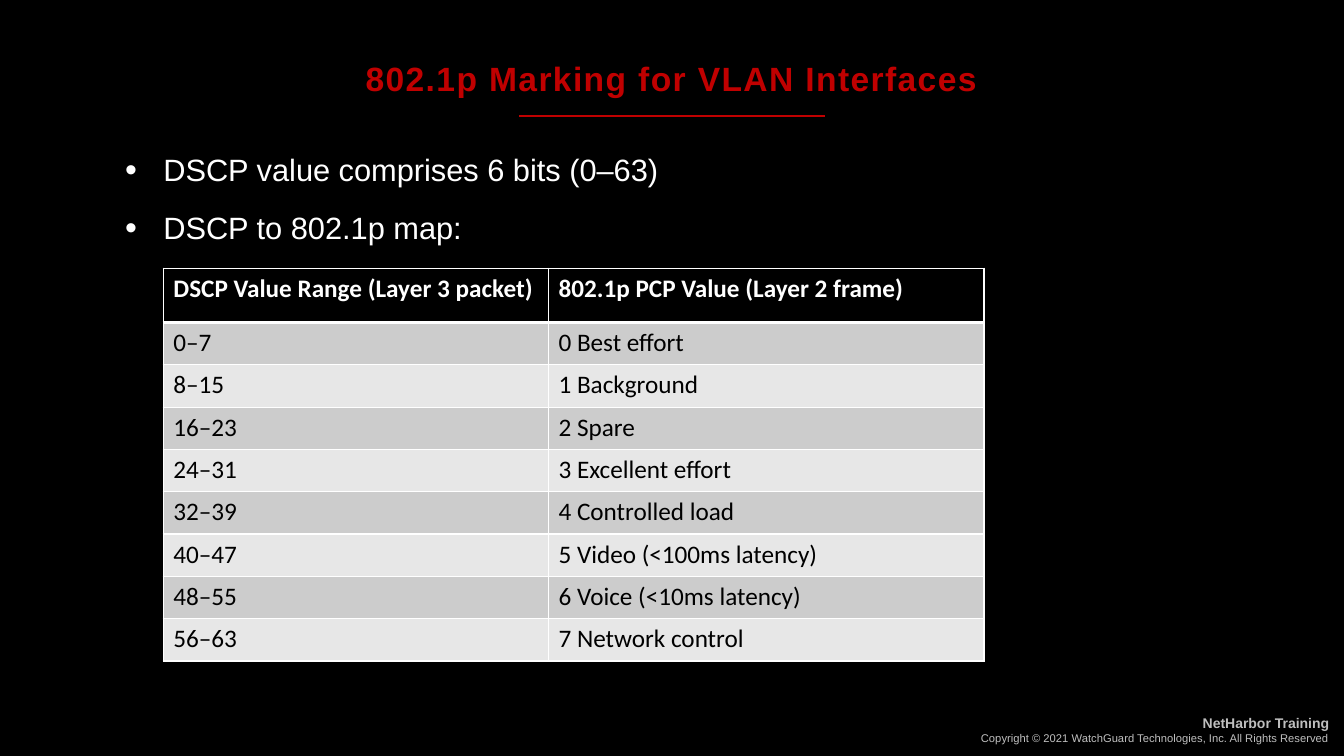
from lxml import etree
from pptx import Presentation
from pptx import util as u
from pptx.dml.color import RGBColor
from pptx.enum import shapes, text
from pptx.oxml import parse_xml
from pptx.oxml.ns import nsdecls, qn

COLORS = {
    "black": "000000",
    "white": "FFFFFF",
    "red": "C00000",
    "gray": "BFBFBF",
    "band_dark": "CCCCCC",
    "band_light": "E7E7E7",
}
BULLETS = ["DSCP value comprises 6 bits (0–63)", "DSCP to 802.1p map:"]
HEADINGS = ["DSCP Value Range (Layer 3 packet)", "802.1p PCP Value (Layer 2 frame)"]
PRIORITIES = [
    "Best effort",
    "Background",
    "Spare",
    "Excellent effort",
    "Controlled load",
    "Video (<100ms latency)",
    "Voice (<10ms latency)",
    "Network control",
]


def color(name):
    return RGBColor.from_string(COLORS[name])


def assign(target, values):
    for name, value in values.items():
        setattr(target, name, value)


class SlideBuilder:
    title_font = {"name": "Arial", "size": u.Pt(24), "bold": True}
    body_font = {"name": "Arial", "size": u.Pt(22), "bold": False}
    table_font = {"name": "Calibri", "size": u.Pt(18)}

    def __init__(self, deck):
        self.page = deck.slides.add_slide(deck.slide_layouts[1])
        fill = self.page.background.fill
        fill.solid()
        fill.fore_color.rgb = color("black")

    def place(self, box, left, top, width, height):
        assign(box, {
            "left": u.Inches(left),
            "top": u.Inches(top),
            "width": u.Inches(width),
            "height": u.Inches(height),
        })

    def add_span(self, paragraph, words, font, color_name):
        span = paragraph.add_run()
        span.text = words
        assign(span.font, font)
        span.font.color.rgb = color(color_name)
        return span

    def title(self, words, *frame):
        box = self.page.shapes.title
        self.place(box, *frame)
        assign(box.text_frame, {
            "word_wrap": False,
            "auto_size": text.MSO_AUTO_SIZE.NONE,
            "vertical_anchor": text.MSO_ANCHOR.MIDDLE,
        })
        paragraph = box.text_frame.paragraphs[0]
        paragraph.alignment = text.PP_ALIGN.CENTER
        span = self.add_span(paragraph, words, self.title_font, "red")
        span.font._element.set("spc", "100")

    def bullet(self, paragraph):
        properties = paragraph._p.get_or_add_pPr()
        properties.set("marL", str(u.Inches(0.38)))
        properties.set("indent", str(-u.Inches(0.38)))
        tint = etree.SubElement(properties, qn("a:buClr"))
        etree.SubElement(tint, qn("a:srgbClr"), val=COLORS["white"])
        etree.SubElement(properties, qn("a:buSzPct"), val="110000")
        etree.SubElement(properties, qn("a:buFont"), typeface="Arial")
        etree.SubElement(properties, qn("a:buChar"), char="•")

    def bullets(self, items, *frame):
        box = self.page.placeholders[1]
        self.place(box, *frame)
        assign(box.text_frame, {
            "word_wrap": True,
            "auto_size": text.MSO_AUTO_SIZE.NONE,
            "vertical_anchor": text.MSO_ANCHOR.TOP,
        })
        for index, words in enumerate(items):
            paragraph = box.text_frame.add_paragraph() if index else box.text_frame.paragraphs[0]
            self.bullet(paragraph)
            assign(paragraph, {"space_before": u.Pt(6 if index else 0), "space_after": u.Pt(9)})
            self.add_span(paragraph, words, self.body_font, "white")

    def rule(self, start, end, height):
        line = self.page.shapes.add_connector(
            shapes.MSO_CONNECTOR.STRAIGHT,
            u.Inches(start), u.Inches(height), u.Inches(end), u.Inches(height))
        line.line.color.rgb = color("red")
        line.line.width = u.Pt(1)
        etree.SubElement(line._element.spPr, qn("a:effectLst"))

    def footer(self, lines, *frame):
        box = self.page.shapes.add_textbox(*map(u.Inches, frame))
        box.text_frame.word_wrap = True
        for index, (words, size, bold) in enumerate(lines):
            paragraph = box.text_frame.add_paragraph() if index else box.text_frame.paragraphs[0]
            paragraph.alignment = text.PP_ALIGN.RIGHT
            font = {"name": "Arial", "size": u.Pt(size), "bold": bold}
            self.add_span(paragraph, words, font, "gray")

    def borders(self, cell, widths):
        properties = cell._tc.get_or_add_tcPr()
        for index, (side, width) in enumerate(widths.items()):
            properties.insert(index, parse_xml(
                f'<a:ln{side} {nsdecls("a")} w="{u.Pt(width)}"><a:solidFill>'
                f'<a:srgbClr val="{COLORS["white"]}"/></a:solidFill></a:ln{side}>'))

    def table(self, rows, widths, heights, left, top):
        frame = self.page.shapes.add_table(
            len(rows), len(widths), u.Inches(left), u.Inches(top),
            u.Inches(sum(widths)), u.Inches(sum(heights)))
        grid = frame.table
        grid.horz_banding = False
        for column, width in zip(grid.columns, widths):
            column.width = u.Inches(width)
        for index, (row, height, values) in enumerate(zip(grid.rows, heights, rows)):
            row.height = u.Inches(height)
            header = index == 0
            band = "black" if header else "band_dark" if index % 2 else "band_light"
            edges = {"L": 1, "R": 1, "T": 3 if index == 1 else 1, "B": 3 if header else 1}
            for cell, words in zip(row.cells, values):
                cell.fill.solid()
                cell.fill.fore_color.rgb = color(band)
                self.borders(cell, edges)
                font = {**self.table_font, "bold": header}
                self.add_span(cell.text_frame.paragraphs[0], words, font,
                              "white" if header else "black")


def main():
    deck = Presentation()
    assign(deck, {"slide_width": u.Inches(13.33), "slide_height": u.Inches(7.5)})
    builder = SlideBuilder(deck)
    builder.rule(8.18, 5.15, 1.15)
    builder.footer([
        ("NetHarbor Training", 10, True),
        ("Copyright © 2021 WatchGuard Technologies, Inc. All Rights Reserved", 8, False),
    ], 9.42, 7.04, 3.86, 0.4)
    builder.title("802.1p Marking for VLAN Interfaces", 2.31, 0.52, 8.7, 0.5)
    builder.bullets(BULLETS, 1.14, 1.45, 11.06, 5.2)
    rows = [HEADINGS] + [
        [f"{8 * level}–{8 * level + 7}", f"{level} {name}"]
        for level, name in enumerate(PRIORITIES)
    ]
    builder.table(rows, [3.82, 4.32], [0.54] + [0.42] * len(PRIORITIES), 1.62, 2.66)
    deck.save("out.pptx")


if __name__ == "__main__":
    main()
